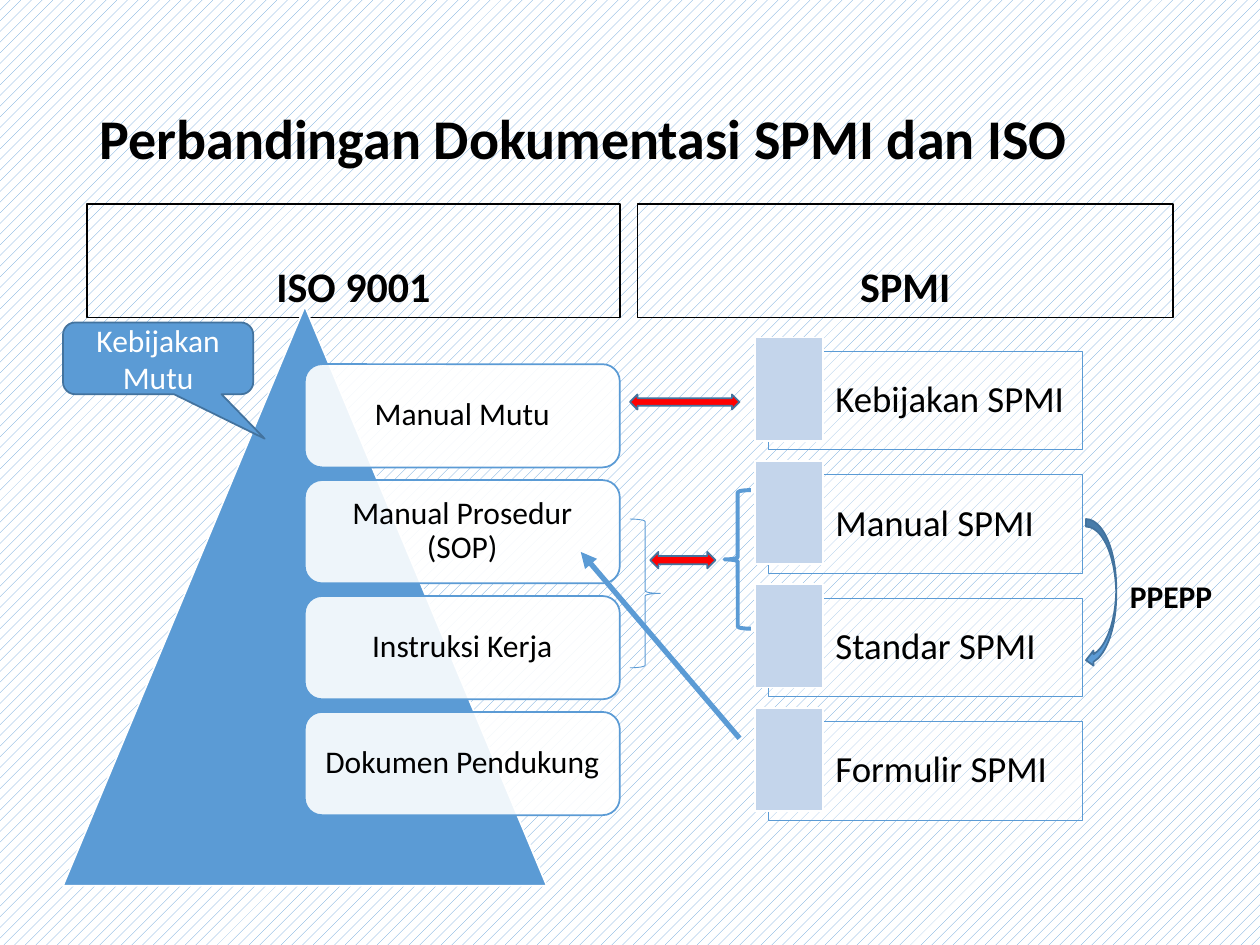
from lxml import etree
from pptx import Presentation
from pptx.dml.color import RGBColor
from pptx.enum import dml, shapes, text
from pptx.oxml.ns import qn
from pptx.util import Pt

# Content
TITLE = "Perbandingan Dokumentasi SPMI dan ISO"
HEADINGS = [("ISO 9001", 49.7, 304.6), ("SPMI", 364.3, 306)]
ISO_DOCUMENTS = ["Manual Mutu", "Manual Prosedur (SOP)", "Instruksi Kerja", "Dokumen Pendukung"]
SPMI_DOCUMENTS = ["Kebijakan SPMI", "Manual SPMI", "Standar SPMI", "Formulir SPMI"]
POLICY = "Kebijakan Mutu"
CYCLE = "PPEPP"

COLORS = {"blue": "5B9BD5", "dark blue": "43739E", "pale blue": "C4D5EB",
          "white": "FFFFFF", "black": "000000", "red": "FF0000"}
FONT = "Calibri"
KIND = shapes.MSO_SHAPE
ALIGN = text.PP_ALIGN
ANCHOR = text.MSO_ANCHOR

# Both columns: top of the first item and distance to the next
CARD_TOP, CARD_STEP = 208.1, 66.24
BOX_TOP, BOX_STEP = 200.9, 70.5


def color(name):
    return RGBColor.from_string(COLORS[name])


def place(shape, box):
    shape.left, shape.top, shape.width, shape.height = (Pt(value) for value in box)


def write(shape, words, size, ink="black", bold=False, align=ALIGN.CENTER,
          anchor=ANCHOR.MIDDLE, insets=(7.2, 3.6, 7.2, 3.6), spacing=0.9, before=0, wrap=True):
    frame = shape.text_frame
    frame.text = words
    frame.word_wrap = wrap
    frame.auto_size = text.MSO_AUTO_SIZE.NONE
    frame.vertical_anchor = anchor
    (frame.margin_left, frame.margin_top,
     frame.margin_right, frame.margin_bottom) = (Pt(value) for value in insets)
    paragraph = frame.paragraphs[0]
    paragraph.alignment = align
    paragraph.line_spacing = spacing
    paragraph.space_before = Pt(before)
    font = paragraph.runs[0].font
    font.name, font.size, font.bold = FONT, Pt(size), bold
    font.color.rgb = color(ink)


def draw(slide, kind, box, fill=None, line="blue", weight=1, opacity=100):
    shape = slide.shapes.add_shape(kind, *(Pt(value) for value in box))
    shape.shadow.inherit = False
    if fill:
        shape.fill.solid()
        shape.fill.fore_color.rgb = color(fill)
        if opacity < 100:
            tint = shape.fill._xPr.find(".//" + qn("a:srgbClr"))
            etree.SubElement(tint, qn("a:alpha"), val=str(opacity * 1000))
    else:
        shape.fill.background()
    shape.line.color.rgb = color(line)
    shape.line.width = Pt(weight)
    return shape


def add_arrow(slide, start, end):
    arrow = slide.shapes.add_connector(
        shapes.MSO_CONNECTOR.STRAIGHT, *(Pt(value) for value in start + end))
    arrow.line.color.rgb = color("blue")
    arrow.line.width = Pt(3)
    etree.SubElement(arrow.line._get_or_add_ln(), qn("a:tailEnd"), type="triangle")
    etree.SubElement(arrow._element.spPr, qn("a:effectLst"))


def add_iso_column(slide):
    draw(slide, KIND.ISOSCELES_TRIANGLE, (36, 175, 276.5, 331.2), "blue", "white")
    for index, words in enumerate(ISO_DOCUMENTS):
        box = (174.2, CARD_TOP + index * CARD_STEP, 180, 59)
        card = draw(slide, KIND.ROUNDED_RECTANGLE, box, "white", opacity=90)
        write(card, words, 18, insets=(5, 5, 5, 5))


def add_spmi_column(slide):
    for index, words in enumerate(SPMI_DOCUMENTS):
        top = BOX_TOP + index * BOX_STEP
        box = draw(slide, KIND.RECTANGLE, (439.2, top, 179.2, 56.2), "white",
                   weight=0.5, opacity=40)
        write(box, words, 21, align=ALIGN.LEFT, insets=(38.2, 6.5, 6.5, 6.5))
        draw(slide, KIND.RECTANGLE, (431.3, top - 8, 39, 59), "pale blue", "white")


def add_links(slide):
    for box in [(360, 225.4, 62.6, 8.6), (371.5, 315.4, 37.4, 9.4)]:
        draw(slide, KIND.LEFT_RIGHT_ARROW, box, "red", "dark blue")
    draw(slide, KIND.LEFT_BRACE, (414, 280.1, 15.1, 79.2), weight=2.25)
    draw(slide, KIND.RIGHT_BRACE, (360, 296.6, 17.3, 85), weight=0.5)
    add_arrow(slide, (422.6, 421.9), (331.9, 315.4))


def main():
    presentation = Presentation()
    presentation.slide_width, presentation.slide_height = Pt(720), Pt(540)
    slide = presentation.slides.add_slide(presentation.slide_layouts[5])

    # Background
    background = slide.background.fill
    background.patterned()
    background.pattern = dml.MSO_PATTERN.PERCENT_20
    background.fore_color.rgb = color("blue")
    background.back_color.rgb = color("white")

    # Title and column headings
    place(slide.shapes.title, (49.7, 28.8, 620.6, 104.4))
    write(slide.shapes.title, TITLE, 32, bold=True, align=ALIGN.LEFT)
    for words, left, width in HEADINGS:
        heading = draw(slide, KIND.RECTANGLE, (left, 116.6, width, 64.8),
                       line="black", weight=0.75)
        write(heading, words, 24, bold=True, anchor=ANCHOR.BOTTOM, before=10)

    # Document columns
    add_iso_column(slide)
    add_spmi_column(slide)

    # Policy callout
    callout = draw(slide, KIND.ROUNDED_RECTANGULAR_CALLOUT, (36, 184.3, 108.7, 41),
                   "blue", "dark blue")
    for index, value in enumerate((0.56, 1.12, 0.17)):
        callout.adjustments[index] = value
    write(callout, POLICY, 18, "white", spacing=1)

    # Links between the columns, then the cycle
    add_links(slide)
    draw(slide, KIND.CURVED_LEFT_ARROW, (620.6, 296.6, 17.3, 85), "blue", "dark blue")
    label = slide.shapes.add_textbox(Pt(638.6), Pt(326.2), Pt(61.9), Pt(28.8))
    write(label, CYCLE, 18, bold=True, align=ALIGN.LEFT, anchor=ANCHOR.TOP,
          spacing=1, wrap=False)

    presentation.save("out.pptx")


if __name__ == "__main__":
    main()
